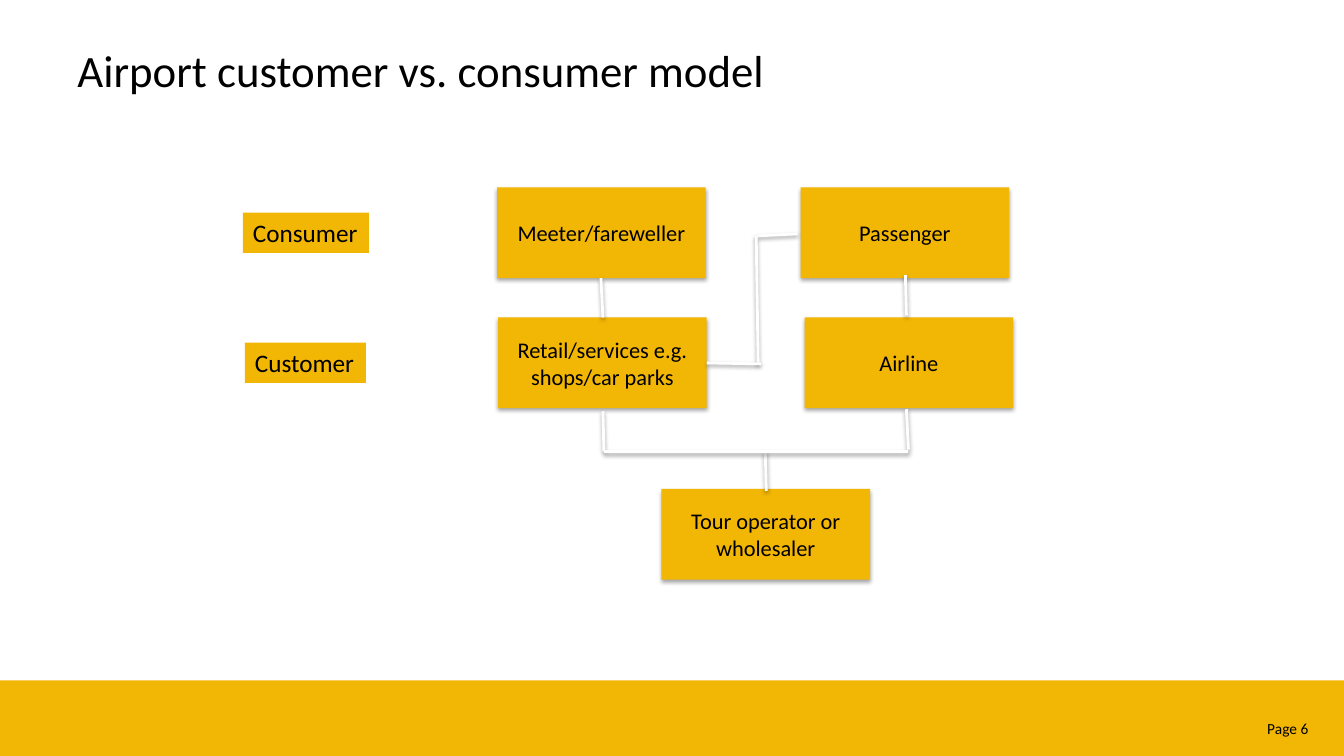
from lxml.etree import SubElement
from pptx import Presentation
from pptx.dml.color import RGBColor
from pptx.enum.shapes import MSO_CONNECTOR, MSO_SHAPE
from pptx.enum.text import MSO_ANCHOR, PP_ALIGN
from pptx.oxml.ns import qn
from pptx.util import Inches, Pt

YELLOW = RGBColor(0xF2, 0xB6, 0x05)
BLACK = RGBColor(0, 0, 0)
WHITE = RGBColor(0xFF, 0xFF, 0xFF)
BOX_WIDTH, BOX_HEIGHT = 2.07, 0.9

prs = Presentation()
prs.slide_width, prs.slide_height = Inches(13.33), Inches(7.5)
slide = prs.slides.add_slide(prs.slide_layouts[6])
shapes = slide.shapes


def add_block(left, top, width, height, text="", size=16, align=PP_ALIGN.LEFT,
              anchor=MSO_ANCHOR.MIDDLE, fill=YELLOW):
    """Add a rectangle, or a plain text box when fill is None."""
    area = [Inches(v) for v in (left, top, width, height)]
    if fill is None:
        block = shapes.add_textbox(*area)
    else:
        block = shapes.add_shape(MSO_SHAPE.RECTANGLE, *area)
        block.fill.solid()
        block.fill.fore_color.rgb = fill
        block.line.fill.background()
        block.shadow.inherit = False
    if text:
        frame = block.text_frame
        frame.word_wrap = True
        frame.vertical_anchor = anchor
        paragraph = frame.paragraphs[0]
        paragraph.alignment = align
        run = paragraph.add_run()
        run.text = text
        run.font.name = "Calibri"
        run.font.size = Pt(size)
        run.font.color.rgb = BLACK
    return block


def add_drop_shadow(effects, opacity, distance):
    shadow = SubElement(effects, qn("a:outerShdw"), blurRad=str(Pt(3.1)),
                        dist=str(Pt(distance)), dir="5400000", rotWithShape="0")
    color = SubElement(shadow, qn("a:srgbClr"), val=str(BLACK))
    SubElement(color, qn("a:alpha"), val=str(opacity * 1000))


# Footer band and page number
add_block(0, 6.75, 13.33, 0.75)
add_block(11.89, 7.08, 1.22, 0.29, "Page 6 ", 11, PP_ALIGN.RIGHT, MSO_ANCHOR.TOP, None)

# Row labels
for left, top, width, label in [(2.41, 2.11, 1.25, "Consumer"),
                                (2.43, 3.4, 1.2, "Customer")]:
    add_block(left, top, width, 0.4, label, 18, anchor=MSO_ANCHOR.TOP)

# Parties in the model
for left, top, party in [
    (4.93, 1.86, "Meeter/fareweller"),
    (7.94, 1.86, "Passenger"),
    (4.94, 3.15, "Retail/services e.g. shops/car parks"),
    (7.98, 3.15, "Airline"),
    (6.56, 4.85, "Tour operator or wholesaler"),
]:
    box = add_block(left, top, BOX_WIDTH, BOX_HEIGHT, party, align=PP_ALIGN.CENTER)
    add_drop_shadow(box.element.spPr.find(qn("a:effectLst")), 35, 1.8)

# Links between the parties
for x1, y1, x2, y2 in [
    (5.96, 2.76, 5.98, 3.15),  # meeter to retail
    (8.98, 2.73, 8.99, 3.13),  # passenger to airline
    (5.98, 4.08, 5.99, 4.48),  # retail down to the shared bar
    (8.99, 4.06, 9.01, 4.46),  # airline down to the shared bar
    (7.59, 4.47, 7.6, 4.87),   # shared bar to tour operator
    (7.91, 2.32, 7.51, 2.34),  # passenger to retail, three parts
    (7.5, 2.34, 7.52, 3.61),
    (7.01, 3.6, 7.55, 3.61),
    (5.99, 4.48, 9.01, 4.48),  # shared bar
]:
    link = shapes.add_connector(MSO_CONNECTOR.STRAIGHT, Inches(x1), Inches(y1),
                                Inches(x2), Inches(y2))
    link.line.color.rgb = WHITE
    link.line.width = Pt(2)
    add_drop_shadow(SubElement(link.element.spPr, qn("a:effectLst")), 37, 1.6)

add_block(0.67, 0.3, 12, 0.78, "Airport customer vs. consumer model", 32, fill=None)

prs.save("out.pptx")
